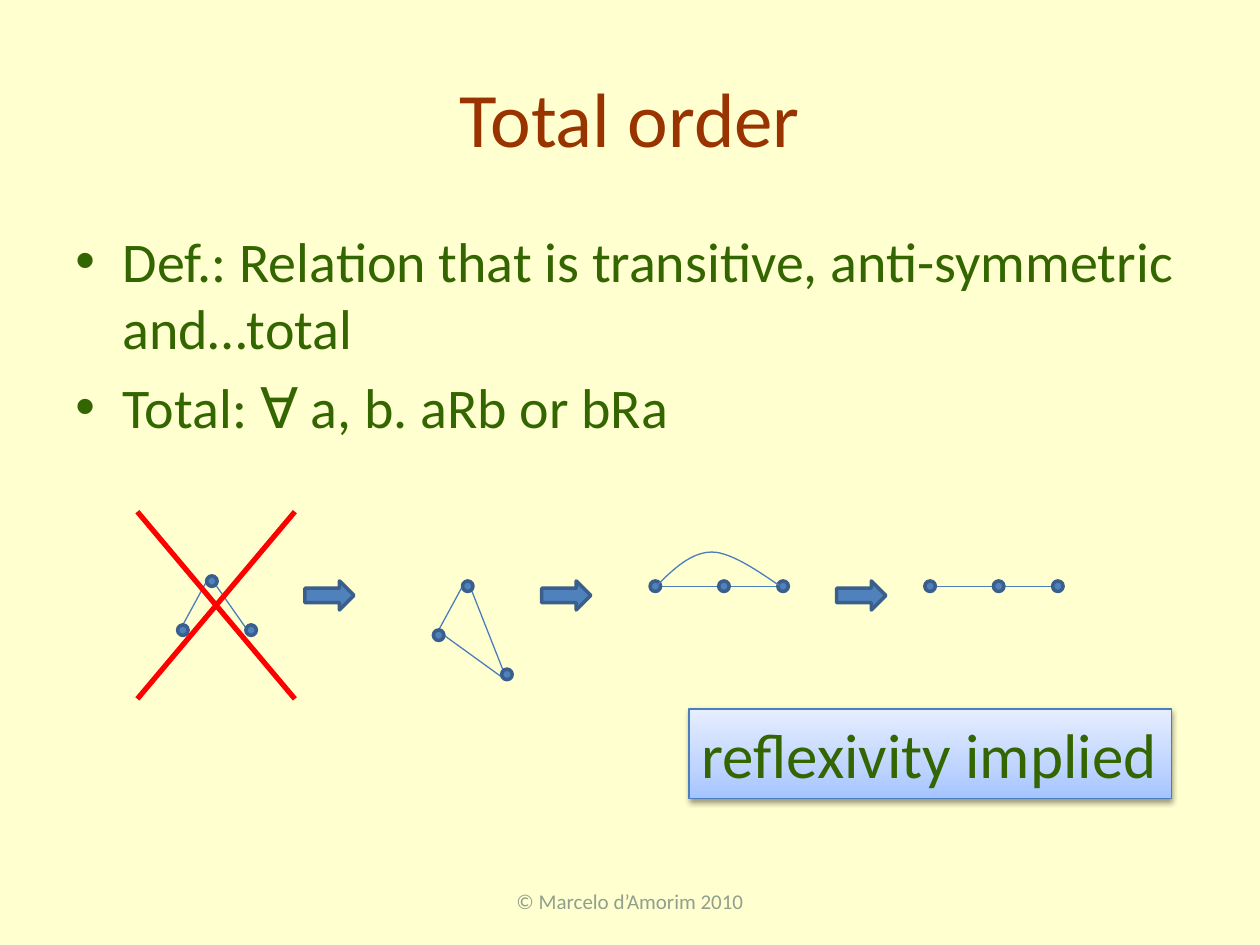
from copy import deepcopy

from lxml import etree
from pptx import Presentation
from pptx.dml.color import RGBColor
from pptx.enum import shapes, text
from pptx.oxml import ns
from pptx.util import Pt

CREAM = RGBColor(0xFF, 0xFF, 0xD0)
BROWN = RGBColor(0x99, 0x33, 0x00)
GREEN = RGBColor(0x33, 0x66, 0x00)
GREY = RGBColor(0x90, 0xA0, 0x8C)
BLUE = RGBColor(0x4F, 0x81, 0xBD)
DARK_BLUE = RGBColor(0x3A, 0x5F, 0x8C)
EDGE_BLUE = RGBColor(0x4B, 0x7E, 0xBC)
RED = RGBColor(0xFF, 0x00, 0x00)
CALLOUT_STOPS = [(0, RGBColor(0xA4, 0xC4, 0xFF)),
                 (0.35, RGBColor(0xBF, 0xD4, 0xFF)),
                 (1, RGBColor(0xE6, 0xEE, 0xFF))]

NODE = 6  # node diameter
# Points on a node's rim, as offsets from its centre
RIM = {"t": (0, -3), "b": (0, 3), "l": (-3, 0), "r": (3, 0),
       "tl": (-2.1, -2.1), "bl": (-2.1, 2.1), "br": (2.1, 2.1)}


def pts(*values):
    return [Pt(v) for v in values]


def write(tf, lines, size, color, align=text.PP_ALIGN.LEFT, **frame):
    for name, value in frame.items():
        setattr(tf, name, value)
    for i, line in enumerate(lines):
        p = tf.paragraphs[0] if i == 0 else tf.add_paragraph()
        p.alignment = align
        r = p.add_run()
        r.text = line
        for name, value in {"name": "Calibri", "size": Pt(size)}.items():
            setattr(r.font, name, value)
        r.font.color.rgb = color


def outline(sp, color, width):
    sp.line.color.rgb = color
    sp.line.width = Pt(width)


def add_line(s, start, end, color, width):
    line = s.shapes.add_connector(shapes.MSO_CONNECTOR.STRAIGHT, *pts(*start, *end))
    outline(line, color, width)
    etree.SubElement(line._element.spPr, ns.qn("a:effectLst"))


def add_blue_shape(s, kind, box):
    sp = s.shapes.add_shape(kind, *pts(*box))
    sp.shadow.inherit = False
    sp.fill.solid()
    sp.fill.fore_color.rgb = BLUE
    outline(sp, DARK_BLUE, 2)


def add_title(s, box):
    title = s.shapes.title
    for name, value in zip(("left", "top", "width", "height"), pts(*box)):
        setattr(title, name, value)
    write(title.text_frame, ["Total order"], 44, BROWN, text.PP_ALIGN.CENTER,
          vertical_anchor=text.MSO_ANCHOR.MIDDLE)


def add_body(s, box):
    tf = s.shapes.add_textbox(*pts(*box)).text_frame
    write(tf, ["Def.: Relation that is transitive, anti-symmetric and…total",
               "Total: ∀ a, b. aRb or bRa"], 32, GREEN, word_wrap=True)
    for p in tf.paragraphs:
        p.space_before = Pt(6.4)
        pPr = p._p.get_or_add_pPr()
        pPr.set("marL", str(Pt(27)))
        pPr.set("indent", str(Pt(-27)))
        etree.SubElement(pPr, ns.qn("a:buFont"), typeface="Arial")
        etree.SubElement(pPr, ns.qn("a:buChar"), char="•")


def add_footer(s, box):
    tf = s.shapes.add_textbox(*pts(*box)).text_frame
    write(tf, ["© Marcelo d’Amorim 2010"], 12, GREY, text.PP_ALIGN.CENTER,
          word_wrap=True, vertical_anchor=text.MSO_ANCHOR.MIDDLE)


def add_graph(s, origin, nodes, edges):
    """Nodes are centres relative to origin; edges are (node, rim, node, rim)."""
    centres = [(origin[0] + x, origin[1] + y) for x, y in nodes]

    def rim_point(i, side):
        return [c + d for c, d in zip(centres[i], RIM[side])]

    for a, side_a, b, side_b in edges:
        add_line(s, rim_point(a, side_a), rim_point(b, side_b), EDGE_BLUE, 0.75)
    for x, y in centres:
        add_blue_shape(s, shapes.MSO_SHAPE.OVAL,
                       (x - NODE / 2, y - NODE / 2, NODE, NODE))


def bezier(p0, p1, p2, p3, steps=16):
    for i in range(1, steps + 1):
        t = i / steps
        weights = ((1 - t) ** 3, 3 * t * (1 - t) ** 2, 3 * t * t * (1 - t), t ** 3)
        yield tuple(sum(w * q[k] for w, q in zip(weights, (p0, p1, p2, p3)))
                    for k in (0, 1))


def add_arc(s, origin):
    """Transitive edge that arches over the middle node."""
    ox, oy = origin
    start, top, end = (0, 0), (31.8, -19.4), (70, -0.5)
    curve = [*bezier(start, (10, -10), (20, -19.4), top),
             *bezier(top, (44, -19.4), (63.5, -4.5), end)]
    builder = s.shapes.build_freeform(Pt(ox), Pt(oy))
    builder.add_line_segments([pts(ox + x, oy + y) for x, y in curve], close=False)
    sp = builder.convert_to_shape()
    sp.shadow.inherit = False
    sp.fill.background()
    outline(sp, EDGE_BLUE, 0.75)


def add_cross(s, box):
    x, y, w, h = box
    add_line(s, (x, y), (x + w, y + h), RED, 3)
    add_line(s, (x + w, y), (x, y + h), RED, 3)


def add_callout(s, box):
    sp = s.shapes.add_shape(shapes.MSO_SHAPE.RECTANGLE, *pts(*box))
    outline(sp, EDGE_BLUE, 0.75)
    # Three-stop gradient, light at the top
    sp.fill.gradient()
    sp.fill.gradient_angle = 90
    stops = sp._element.spPr.find(".//" + ns.qn("a:gsLst"))
    stops.append(deepcopy(stops[-1]))
    for stop, (position, color) in zip(sp.fill.gradient_stops, CALLOUT_STOPS):
        stop.position = position
        stop.color.rgb = color
    # Soft shadow below
    sp.shadow.inherit = False
    effects = sp._element.spPr.find(ns.qn("a:effectLst"))
    shadow = etree.SubElement(effects, ns.qn("a:outerShdw"), blurRad=str(Pt(3.1)),
                              dist=str(Pt(1.6)), dir="5400000", rotWithShape="0")
    black = etree.SubElement(shadow, ns.qn("a:srgbClr"), val="000000")
    etree.SubElement(black, ns.qn("a:alpha"), val="38000")
    write(sp.text_frame, ["reflexivity implied"], 36, GREEN, word_wrap=False,
          vertical_anchor=text.MSO_ANCHOR.TOP,
          auto_size=text.MSO_AUTO_SIZE.SHAPE_TO_FIT_TEXT)


def add_diagram(s, box):
    x, y = box[:2]
    chain = [(3, 3), (42.2, 3), (76, 3)]
    chain_edges = [(1, "l", 0, "r"), (2, "l", 1, "r")]
    # Branching order, then the triangle that makes it total
    add_graph(s, (x + 23, y + 36.7), [(19.6, 3), (3, 31), (42, 31)],
              [(0, "l", 1, "t"), (0, "br", 2, "b")])
    add_graph(s, (x + 169.2, y + 39.6), [(19.6, 3), (3, 31), (42, 53.4)],
              [(0, "l", 1, "t"), (0, "br", 2, "tl"), (2, "bl", 1, "r")])
    # Chain with and without its transitive edge
    for dx in (293, 450):
        add_graph(s, (x + dx, y + 39.6), chain, chain_edges)
    add_arc(s, (x + 296.6, y + 42.5))
    for dx in (95.7, 231, 399.6):
        add_blue_shape(s, shapes.MSO_SHAPE.RIGHT_ARROW, (x + dx, y + 39.6, 28.1, 16.6))
    add_cross(s, (x, y, 90, 107))


def main():
    prs = Presentation()
    prs.slide_width, prs.slide_height = pts(720, 540)
    s = prs.slides.add_slide(prs.slide_layouts[5])
    s.background.fill.solid()
    s.background.fill.fore_color.rgb = CREAM
    add_title(s, (36, 21.6, 648, 90))
    add_body(s, (36, 126, 648, 356.4))
    add_footer(s, (246, 500.5, 228, 28.75))
    add_diagram(s, (78.5, 292.4, 530, 107))
    add_callout(s, (393.8, 405.2, 275.8, 51))
    prs.save("out.pptx")


if __name__ == "__main__":
    main()
